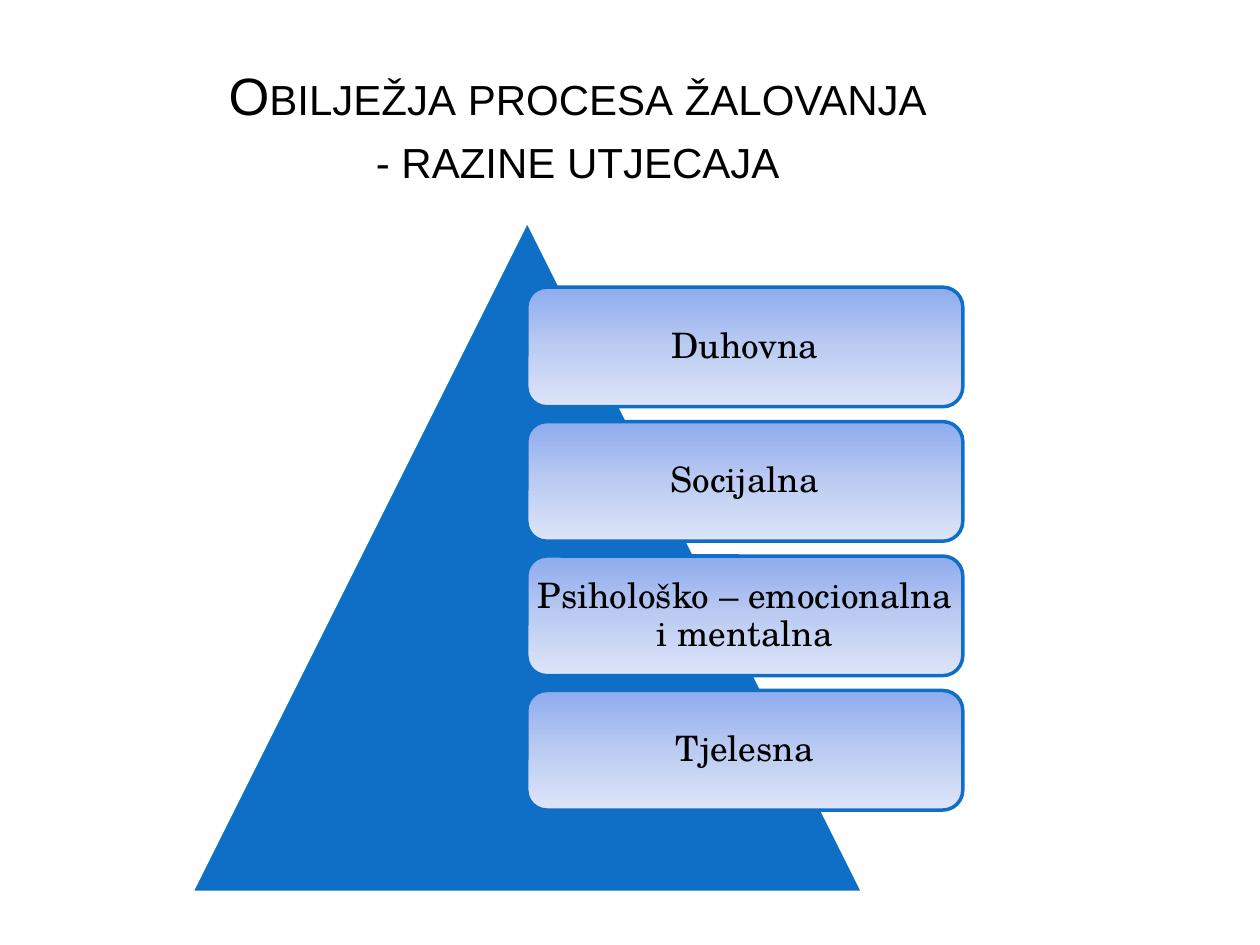
"""Build a slide showing the levels of grief as boxes over a pyramid."""
import copy

import pptx
import pptx.dml.color
import pptx.enum.shapes
import pptx.enum.text
import pptx.util

Cm = pptx.util.Cm
Pt = pptx.util.Pt
SHAPES = pptx.enum.shapes.MSO_SHAPE
ANCHOR = pptx.enum.text.MSO_ANCHOR
ALIGN = pptx.enum.text.PP_ALIGN

TITLE_LINES = ["Obilježja procesa žalovanja", "- razine utjecaja"]
LEVELS = ["Duhovna", "Socijalna", "Psihološko – emocionalna i mentalna", "Tjelesna"]
WHITE, BLACK, BLUE = "FFFFFF", "000000", "0F6FC6"
GRADIENT = [(0, "8EABEE"), (0.5, "BBCBF2"), (1, "DEE5F8")]
BOX_LEFT, BOX_TOP, BOX_WIDTH, BOX_HEIGHT, BOX_PITCH = 10.62, 5.79, 8.79, 2.41, 2.71


def rgb(value):
    return pptx.dml.color.RGBColor.from_string(value)


def add_text(paragraph, text, font_name, size):
    run = paragraph.add_run()
    run.text = text
    run.font.name = font_name
    run.font.size = Pt(size)
    run.font.color.rgb = rgb(BLACK)
    return run


def add_outlined_shape(slide, kind, left, top, width, height, line_color):
    shape = slide.shapes.add_shape(kind, Cm(left), Cm(top), Cm(width), Cm(height))
    shape.shadow.inherit = False
    shape.line.color.rgb = rgb(line_color)
    shape.line.width = Pt(2)
    return shape


def fill_gradient(shape):
    shape.fill.gradient()
    shape.fill.gradient_angle = 270
    stop_list = shape.fill._fill._gradFill.gsLst
    stop_list.insert(1, copy.deepcopy(stop_list[0]))
    for stop, (position, color) in zip(shape.fill.gradient_stops, GRADIENT):
        stop.position = position
        stop.color.rgb = rgb(color)


def add_title(slide):
    title = slide.shapes.title
    title.left, title.top, title.width, title.height = Cm(1.27), Cm(0.76), Cm(20.75), Cm(3.18)
    frame = title.text_frame
    frame.word_wrap = True
    frame.auto_size = pptx.enum.text.MSO_AUTO_SIZE.NONE
    frame.vertical_anchor = ANCHOR.BOTTOM
    paragraph = frame.paragraphs[0]
    paragraph.alignment = ALIGN.CENTER
    for index, line in enumerate(TITLE_LINES):
        if index:
            paragraph.add_line_break()
        run = add_text(paragraph, line, "Arial", 30)
        run.font._element.set("cap", "small")


def add_level(slide, index, text):
    box = add_outlined_shape(slide, SHAPES.ROUNDED_RECTANGLE, BOX_LEFT,
                             BOX_TOP + index * BOX_PITCH, BOX_WIDTH, BOX_HEIGHT, BLUE)
    fill_gradient(box)
    frame = box.text_frame
    frame.word_wrap = True
    frame.vertical_anchor = ANCHOR.MIDDLE
    frame.margin_left = frame.margin_right = Cm(0.08)
    frame.margin_top = frame.margin_bottom = Cm(0.2)
    paragraph = frame.paragraphs[0]
    paragraph.alignment = ALIGN.CENTER
    paragraph.line_spacing = 0.9
    add_text(paragraph, text, "TeX Gyre Schola", 20)


def main():
    presentation = pptx.Presentation()
    presentation.slide_width, presentation.slide_height = Cm(25.4), Cm(19.05)
    slide = presentation.slides.add_slide(presentation.slide_layouts[5])
    add_title(slide)
    pyramid = add_outlined_shape(slide, SHAPES.ISOSCELES_TRIANGLE, 3.86, 4.45, 13.54, 13.54, WHITE)
    pyramid.fill.solid()
    pyramid.fill.fore_color.rgb = rgb(BLUE)
    for index, text in enumerate(LEVELS):
        add_level(slide, index, text)
    presentation.save("out.pptx")


if __name__ == "__main__":
    main()
